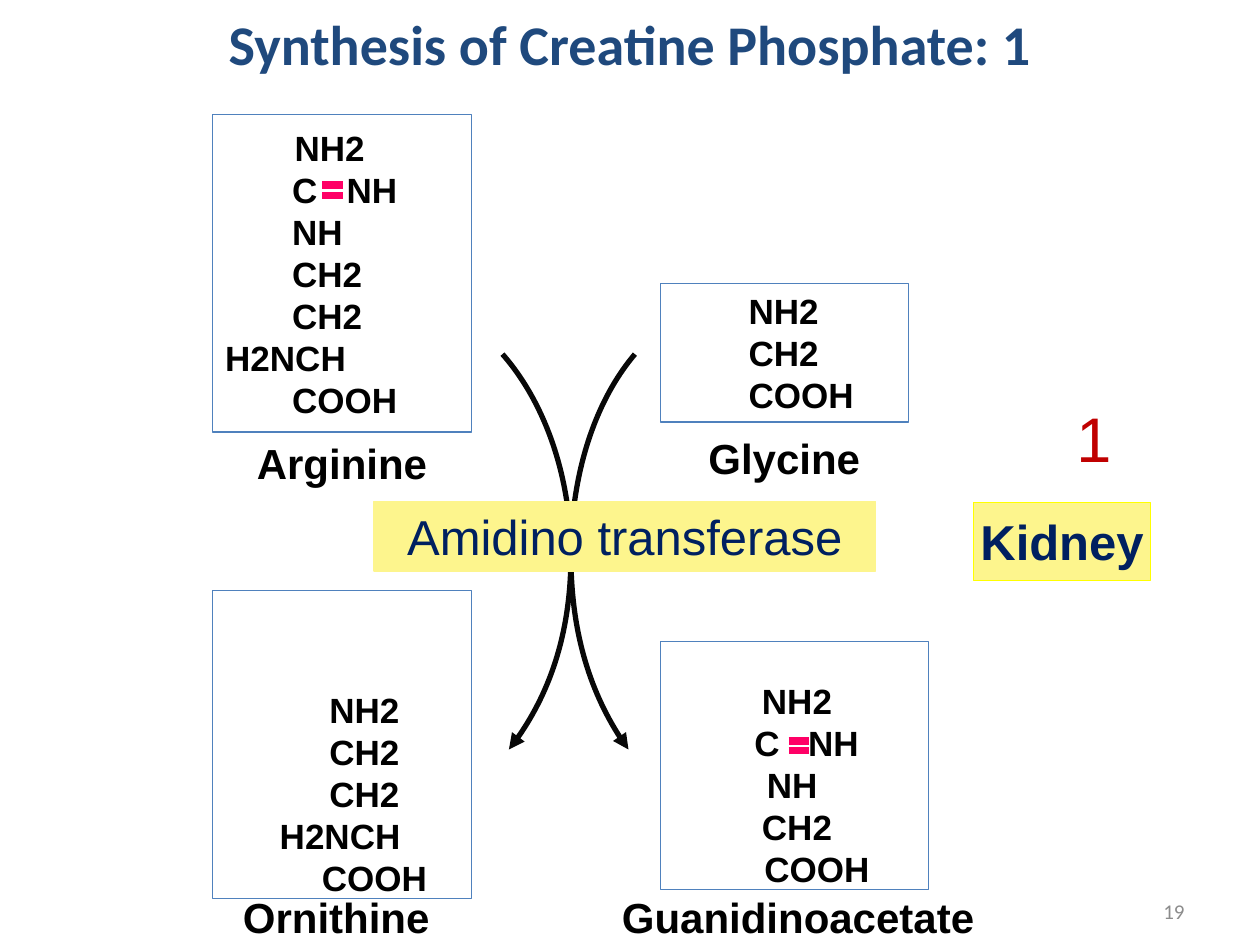
from lxml import etree
from pptx import Presentation
from pptx.dml.color import RGBColor
from pptx.enum.shapes import MSO_CONNECTOR, MSO_SHAPE
from pptx.enum.text import MSO_ANCHOR, PP_ALIGN
from pptx.oxml.ns import qn
from pptx.util import Cm, Pt

LEFT, CENTER, RIGHT = PP_ALIGN.LEFT, PP_ALIGN.CENTER, PP_ALIGN.RIGHT
TOP, MIDDLE, BOTTOM = MSO_ANCHOR.TOP, MSO_ANCHOR.MIDDLE, MSO_ANCHOR.BOTTOM
RECTANGLE, STRAIGHT = MSO_SHAPE.RECTANGLE, MSO_CONNECTOR.STRAIGHT
TITLE_ONLY = 5

COLORS = {
    "title": "1F497D", "text": "000000", "frame": "4F81BD", "navy": "002060",
    "yellow": "FDF58D", "bright": "FFFF00", "bond": "FF0066",
    "curve": "080808", "step": "C00000", "number": "8C8C8C",
}

MOLECULES = [
    ((4.29, 2.31, 5.21, 6.4), MIDDLE,
     [("NH2", 1.65), ("C", 1.6, "NH", 2.7), ("NH", 1.6), ("CH2", 1.6),
      ("CH2", 1.6), ("H2NCH", 0.25), ("COOH", 1.6)]),
    ((13.31, 5.72, 5, 2.79), MIDDLE,
     [("NH2", 1.78), ("CH2", 1.78), ("COOH", 1.78)]),
    ((4.29, 11.91, 5.21, 6.2), BOTTOM,
     [("NH2", 2.35), ("CH2", 2.35), ("CH2", 2.35), ("H2NCH", 1.35), ("COOH", 2.2)]),
    ((13.31, 12.93, 5.41, 5), BOTTOM,
     [("NH2", 2.05), ("C", 1.9, "NH", 2.98), ("NH", 2.15), ("CH2", 2.05), ("COOH", 2.1)]),
]

NAMES = [
    ("Guanidinoacetate", (12.09, 17.93, 8, 1.12)),
    ("Ornithine", (4.09, 17.93, 5.38, 1.12)),
    ("Arginine", (4.29, 8.74, 5.21, 1.19)),
    ("Glycine", (13.31, 8.53, 5, 1.4)),
]

CURVES = [
    [(12.67, 15.11), (11.94, 14.12), (11.51, 12.7), (11.51, 11.2),
     (11.51, 9.63), (11.96, 8.13), (12.8, 7.14)],
    [(10.26, 15.11), (11.05, 14.12), (11.51, 12.7), (11.51, 11.2),
     (11.51, 9.63), (11, 8.13), (10.13, 7.14)],
]

BONDS = [(6.5, 3.73), (6.5, 3.94), (15.9, 14.94), (15.9, 15.13)]


def color(name):
    return RGBColor.from_string(COLORS[name])


def write(para, text, size=20, ink="text", bold=False, font="Arial", align=LEFT):
    """Fill a paragraph with one formatted span."""
    para.alignment = align
    span = para.add_run()
    span.text = text
    span.font.size, span.font.bold, span.font.name = Pt(size), bold, font
    span.font.color.rgb = color(ink)


class Painter:
    """Draws the elements of a reaction diagram on one page."""

    def __init__(self, page, inset=0, frame_width=0.75):
        self.page, self.inset, self.frame_width = page, Cm(inset), Pt(frame_width)

    def prepare(self, box, anchor):
        frame = box.text_frame
        frame.word_wrap, frame.vertical_anchor = True, anchor
        frame.margin_left = frame.margin_right = self.inset
        frame.margin_top = frame.margin_bottom = self.inset
        return frame

    def title(self, text, place):
        box = self.page.shapes.title
        box.left, box.top, box.width, box.height = map(Cm, place)
        frame = self.prepare(box, TOP)
        frame.margin_top = Cm(0.2)
        write(frame.paragraphs[0], text, size=32, ink="title", bold=True,
              font="Calibri", align=CENTER)

    def label(self, text, place, **style):
        box = self.page.shapes.add_textbox(*map(Cm, place))
        write(self.prepare(box, MIDDLE).paragraphs[0], text, **style)

    def panel(self, place, line, fill=None, anchor=MIDDLE):
        box = self.page.shapes.add_shape(RECTANGLE, *map(Cm, place))
        box.shadow.inherit = False
        box.line.color.rgb, box.line.width = color(line), self.frame_width
        if fill:
            box.fill.solid()
            box.fill.fore_color.rgb = color(fill)
        else:
            box.fill.background()
        return self.prepare(box, anchor)

    def badge(self, text, place, line, bold=False):
        frame = self.panel(place, line, fill="yellow")
        write(frame.paragraphs[0], text, size=28, ink="navy", bold=bold, align=CENTER)

    def molecule(self, place, anchor, rows):
        frame = self.panel(place, "frame", anchor=anchor)
        for index, (atom, indent, *branch) in enumerate(rows):
            para = frame.add_paragraph() if index else frame.paragraphs[0]
            para.line_spacing = Pt(24)
            properties = para._p.get_or_add_pPr()
            text = atom
            if branch:
                partner, stop = branch
                text = f"\t{atom}\t{partner}"
                tabs = etree.SubElement(properties, qn("a:tabLst"))
                for position in (indent, stop):
                    etree.SubElement(tabs, qn("a:tab"), pos=str(Cm(position)), algn="l")
            else:
                properties.set("marL", str(Cm(indent)))
                properties.set("indent", "0")
            write(para, text, bold=True)

    def curve(self, points):
        start, *others = [(Cm(x), Cm(y)) for x, y in points]
        builder = self.page.shapes.build_freeform(*start)
        builder.add_line_segments(others, close=False)
        arc = builder.convert_to_shape()
        arc.shadow.inherit = False
        arc.fill.background()
        arc.line.color.rgb, arc.line.width = color("curve"), Pt(3)
        etree.SubElement(arc.line._get_or_add_ln(), qn("a:headEnd"), type="triangle")
        outline = arc._element.xpath(".//a:path")[0]
        segments = outline.findall(qn("a:lnTo"))
        for first in range(0, len(segments), 3):
            bend = etree.SubElement(outline, qn("a:cubicBezTo"))
            for segment in segments[first:first + 3]:
                bend.append(segment[0])
                outline.remove(segment)

    def bond(self, left, top, length=0.41):
        stroke = self.page.shapes.add_connector(
            STRAIGHT, Cm(left), Cm(top), Cm(left + length), Cm(top))
        stroke.line.color.rgb, stroke.line.width = color("bond"), Pt(4.5)
        etree.SubElement(stroke._element.spPr, qn("a:effectLst"))


def main():
    deck = Presentation()
    deck.slide_width, deck.slide_height = Cm(25.4), Cm(19.05)
    painter = Painter(deck.slides.add_slide(deck.slide_layouts[TITLE_ONLY]))
    painter.title("Synthesis of Creatine Phosphate: 1", (0, 0, 25.4, 1.93))
    painter.label("19", (18.21, 17.85, 5.67, 1.02), size=12, ink="number",
                  font="Calibri", align=RIGHT)
    for molecule in MOLECULES:
        painter.molecule(*molecule)
    for points in CURVES:
        painter.curve(points)
    painter.badge("Amidino transferase", (7.54, 10.11, 10.11, 1.4), "yellow")
    for name, place in NAMES:
        painter.label(name, place, size=24, bold=True, align=CENTER)
    painter.badge("Kidney", (19.63, 10.13, 3.56, 1.57), "bright", bold=True)
    for bond in BONDS:
        painter.bond(*bond)
    painter.label("1", (21.44, 7.92, 1.22, 1.8), size=36, ink="step", align=CENTER)
    deck.save("out.pptx")


if __name__ == "__main__":
    main()
